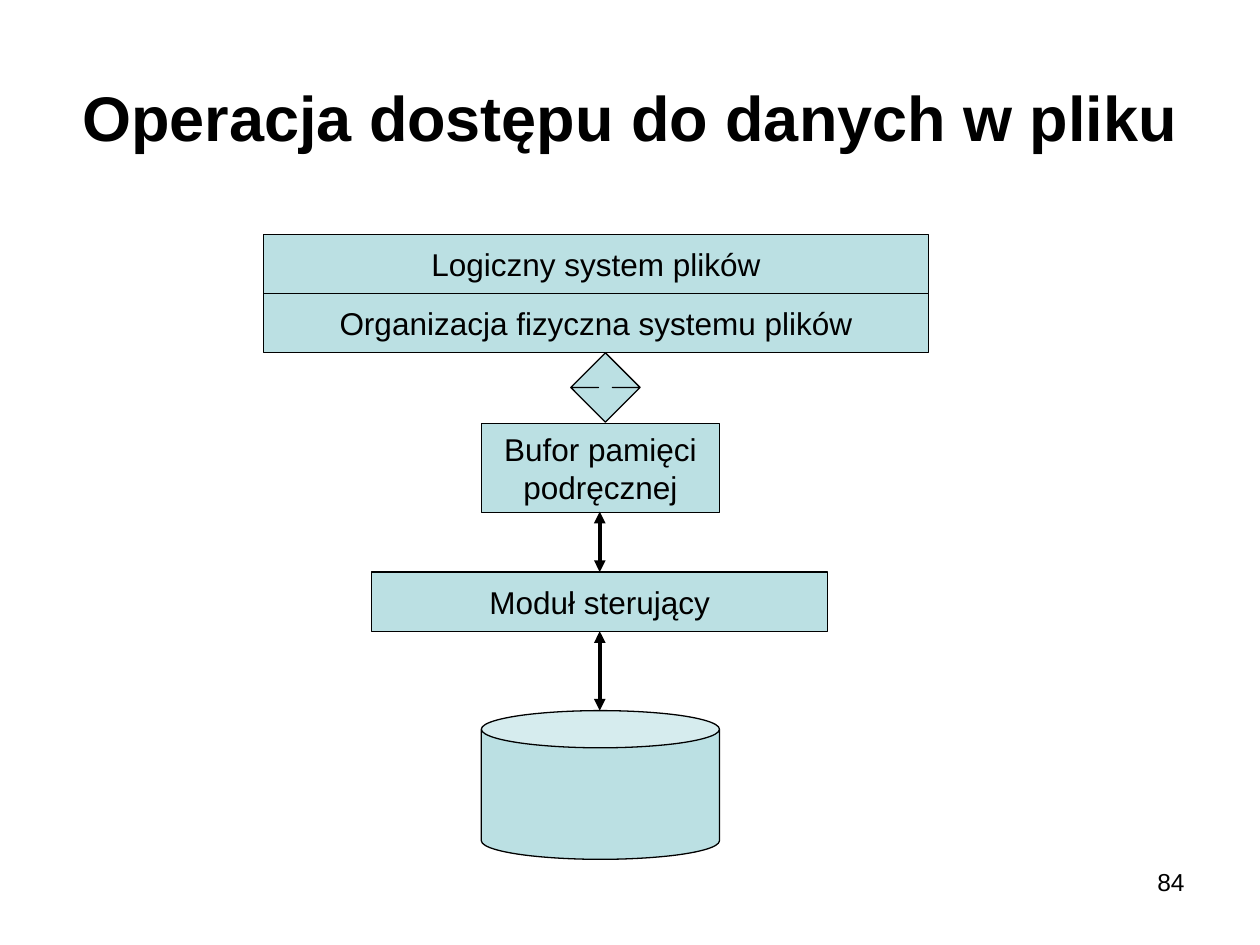
from pptx import Presentation
from pptx.dml.color import RGBColor
from pptx.enum.shapes import MSO_CONNECTOR, MSO_SHAPE
from pptx.enum.text import MSO_ANCHOR, PP_ALIGN
from pptx.oxml.ns import qn
from pptx.util import Inches, Pt
from lxml import etree

BLACK = RGBColor(0x00, 0x00, 0x00)
AQUA = RGBColor(0xBB, 0xE0, 0xE3)
RECT, CAN, ARROW = MSO_SHAPE.RECTANGLE, MSO_SHAPE.CAN, MSO_SHAPE.UP_DOWN_ARROW
LINE = MSO_CONNECTOR.STRAIGHT
MIDDLE, TOP = MSO_ANCHOR.MIDDLE, MSO_ANCHOR.TOP
CENTER, RIGHT = PP_ALIGN.CENTER, PP_ALIGN.RIGHT


def write(shape, text, size, bold=False, align=CENTER, anchor=MIDDLE, wrap=True):
    frame = shape.text_frame
    frame.text = text
    frame.word_wrap = wrap
    frame.vertical_anchor = anchor
    font = {"name": "Arial", "size": Pt(size), "bold": bold}
    for para in frame.paragraphs:
        para.alignment = align
        for run in para.runs:
            for key, value in font.items():
                setattr(run.font, key, value)
            run.font.color.rgb = BLACK


def draw(slide, kind, left, top, width, height):
    shape = slide.shapes.add_shape(
        kind, Inches(left), Inches(top), Inches(width), Inches(height))
    shape.shadow.inherit = False
    shape.fill.solid()
    shape.fill.fore_color.rgb = AQUA
    shape.line.color.rgb = BLACK
    shape.line.width = Pt(0.75)
    return shape


deck = Presentation()
deck.slide_width, deck.slide_height = Inches(10), Inches(7.5)
slide = deck.slides.add_slide(deck.slide_layouts[5])

# Title
title = slide.shapes.title
place = {"left": 0.5, "top": 0.3, "width": 9, "height": 1.25}
for key, value in place.items():
    setattr(title, key, Inches(value))
write(title, "Operacja dostępu do danych w pliku", 36, bold=True)

# Page number
number = slide.shapes.add_textbox(
    Inches(7.17), Inches(6.83), Inches(2.33), Inches(0.52))
write(number, "84", 14, align=RIGHT, anchor=TOP)

# Layers of file access
layers = [
    ("Logiczny system plików", 2.09, 1.86, 5.28, 0.47),
    ("Organizacja fizyczna systemu plików", 2.09, 2.33, 5.28, 0.47),
    ("Bufor pamięci\npodręcznej", 3.82, 3.36, 1.89, 0.71),
    ("Moduł sterujący", 2.95, 4.54, 3.62, 0.47),
]
for text, *box in layers:
    write(draw(slide, RECT, *box), text, 18, wrap=False)

# Disk, and the wide arrow between file system and buffer
disk = draw(slide, CAN, 3.82, 5.64, 1.89, 1.18)
disk.adjustments[0] = 0.25
arrow = draw(slide, ARROW, 4.53, 2.8, 0.55, 0.55)
arrow.adjustments[0] = 0.5
arrow.adjustments[1] = 0.2

# Two-way links: buffer to module, module to disk
for start, end in [(4.06, 4.54), (5.01, 5.64)]:
    link = slide.shapes.add_connector(
        LINE, Inches(4.76), Inches(start), Inches(4.76), Inches(end))
    link.line.color.rgb = BLACK
    link.line.width = Pt(2.25)
    stroke = link.line._get_or_add_ln()
    for tag in ("a:headEnd", "a:tailEnd"):
        etree.SubElement(stroke, qn(tag), type="triangle")
    etree.SubElement(link._element.spPr, qn("a:effectLst"))

deck.save("out.pptx")
